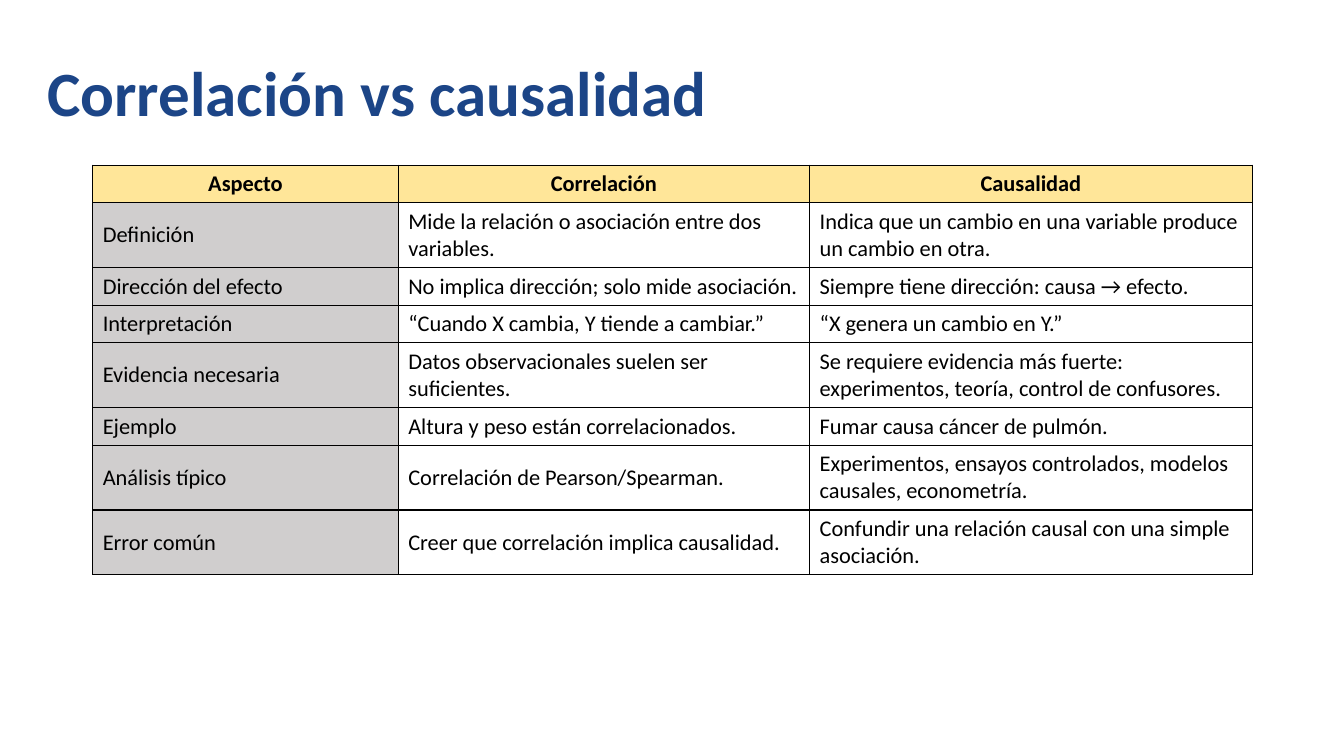
import pptx
import pptx.util
import pptx.dml.color
import pptx.enum.text
import pptx.oxml

TITLE = "Correlación vs causalidad"
ROWS = [
    ("Aspecto", "Correlación", "Causalidad"),
    ("Definición", "Mide la relación o asociación entre dos variables.",
     "Indica que un cambio en una variable produce un cambio en otra."),
    ("Dirección del efecto", "No implica dirección; solo mide asociación.",
     "Siempre tiene dirección: causa → efecto."),
    ("Interpretación", "“Cuando X cambia, Y tiende a cambiar.”",
     "“X genera un cambio en Y.”"),
    ("Evidencia necesaria", "Datos observacionales suelen ser suficientes.",
     "Se requiere evidencia más fuerte: experimentos, teoría, control de confusores."),
    ("Ejemplo", "Altura y peso están correlacionados.",
     "Fumar causa cáncer de pulmón."),
    ("Análisis típico", "Correlación de Pearson/Spearman.",
     "Experimentos, ensayos controlados, modelos causales, econometría."),
    ("Error común", "Creer que correlación implica causalidad.",
     "Confundir una relación causal con una simple asociación."),
]
COLORS = {"title": "1C4587", "text": "000000", "border": "000000",
          "header": "FFE699", "aspect": "D0CECE"}
FONT = "Calibri"
COL_WIDTHS = (3.03, 4.08, 4.39)
LINES = (1, 2, 1, 1, 2, 1, 2, 2)
CELL_PAD, LINE_HEIGHT = 0.1, 0.27

Inches, Pt = pptx.util.Inches, pptx.util.Pt
PP_ALIGN, MSO_ANCHOR = pptx.enum.text.PP_ALIGN, pptx.enum.text.MSO_ANCHOR


def rgb(name):
    return pptx.dml.color.RGBColor.from_string(COLORS[name])


def add_run(p, text, size, color, bold):
    r = p.add_run()
    r.text = text
    r.font.name = FONT
    r.font.size = Pt(size)
    r.font.bold = bold
    r.font.color.rgb = rgb(color)


def add_borders(cell):
    tc_pr = cell._tc.get_or_add_tcPr()
    for side in "LRTB":
        tc_pr.append(pptx.oxml.parse_xml(
            f'<a:ln{side} xmlns:a="http://schemas.openxmlformats.org/drawingml/2006/main" '
            f'w="{Pt(1)}"><a:solidFill><a:srgbClr val="{COLORS["border"]}"/>'
            f'</a:solidFill></a:ln{side}>'))


def fill_cell(cell, text, row, col):
    header = row == 0
    cell.vertical_anchor = MSO_ANCHOR.MIDDLE
    add_borders(cell)
    if header or col == 0:
        cell.fill.solid()
        cell.fill.fore_color.rgb = rgb("header" if header else "aspect")
    else:
        cell.fill.background()
    p = cell.text_frame.paragraphs[0]
    p.alignment = PP_ALIGN.CENTER if header else PP_ALIGN.LEFT
    add_run(p, text, 16, "text", header)


def add_title(slide):
    sp = slide.shapes.title
    sp.left, sp.top, sp.width, sp.height = map(Inches, (0.37, 0.43, 12.59, 0.96))
    tf = sp.text_frame
    tf.word_wrap = True
    tf.vertical_anchor = MSO_ANCHOR.MIDDLE
    tf.margin_left = tf.margin_right = tf.margin_top = tf.margin_bottom = Inches(0.1)
    p = tf.paragraphs[0]
    p.alignment = PP_ALIGN.LEFT
    add_run(p, TITLE, 45, "title", True)


def add_comparison(slide):
    heights = [CELL_PAD + n * LINE_HEIGHT for n in LINES]
    table = slide.shapes.add_table(
        len(ROWS), len(COL_WIDTHS), Inches(0.92), Inches(1.64),
        Inches(sum(COL_WIDTHS)), Inches(sum(heights))).table
    table.horz_banding = False
    for column, width in zip(table.columns, COL_WIDTHS):
        column.width = Inches(width)
    for i, (texts, height) in enumerate(zip(ROWS, heights)):
        table.rows[i].height = Inches(height)
        for j, text in enumerate(texts):
            fill_cell(table.cell(i, j), text, i, j)


def main():
    prs = pptx.Presentation()
    prs.slide_width, prs.slide_height = Inches(13.33), Inches(7.5)
    slide = prs.slides.add_slide(prs.slide_layouts[5])
    add_title(slide)
    add_comparison(slide)
    prs.save("out.pptx")


if __name__ == "__main__":
    main()
